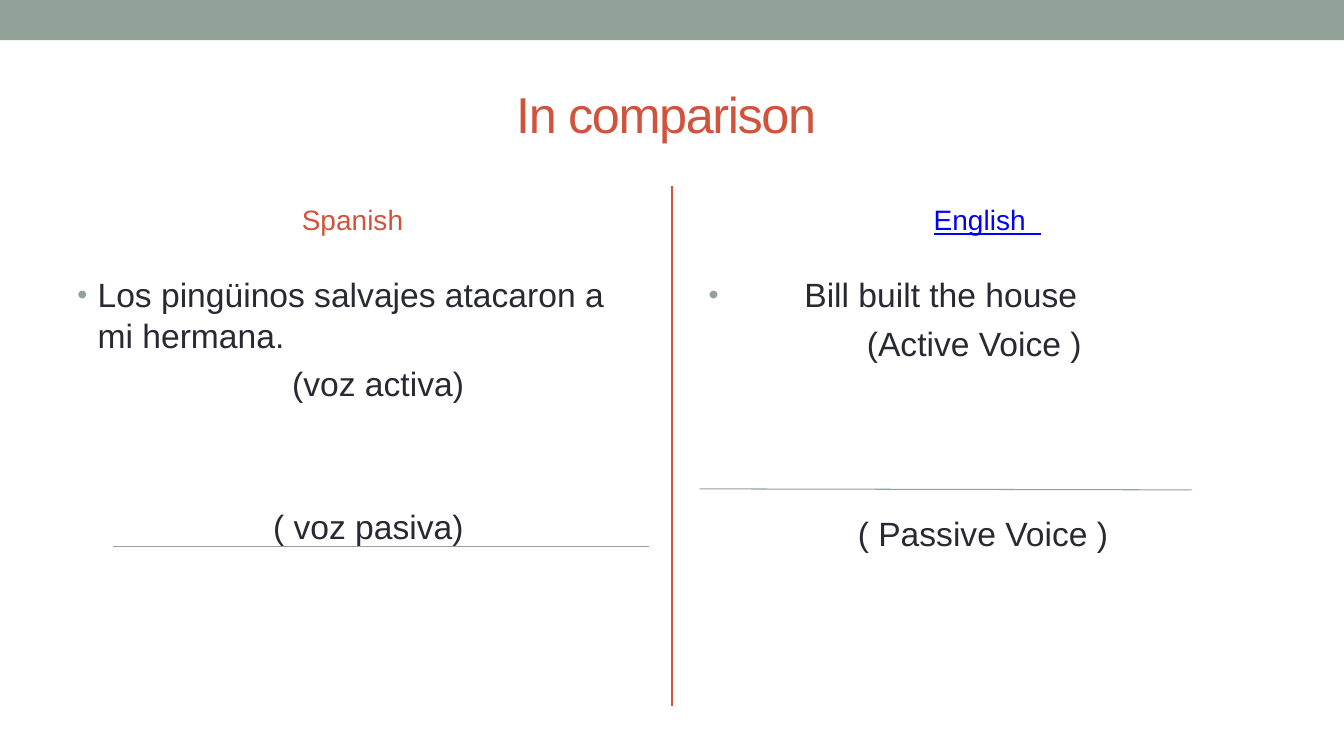
import pptx
import pptx.dml.color
import pptx.enum.shapes
import pptx.enum.text
import pptx.oxml.ns
import pptx.util
from lxml import etree

Inches = pptx.util.Inches
Pt = pptx.util.Pt
ANCHOR = pptx.enum.text.MSO_ANCHOR
ALIGN = pptx.enum.text.PP_ALIGN
COLORS = {"sage": "93A299", "brick": "D2533C", "ink": "292934", "link": "0000FF"}
SLIDE_WIDTH, SLIDE_HEIGHT = 13.33, 7.5
MARGIN = 0.67
COLUMN_WIDTH = 5.73

# Each sentence: text, left indent in inches, space before in points, bulleted, hanging indent
COLUMNS = [
    {
        "left": MARGIN, "heading": "Spanish ", "color": "brick", "underline": False,
        "sentences": [
            ("Los pingüinos salvajes atacaron a mi hermana.", 0.2, 0, True),
            ("(voz activa)", 2.13, 6, False),
            ("( voz pasiva)", 1.94, 73, False),
        ],
        "rule": ((0.45, 3.59), (5.77, 3.59)),
    },
    {
        "left": SLIDE_WIDTH - MARGIN - COLUMN_WIDTH, "heading": "English  ",
        "color": "link", "underline": True,
        "sentences": [
            ("Bill built the house", 0.95, 0, True),
            ("(Active Voice )", 1.57, 6, False),
            ("( Passive Voice )", 1.48, 107, False),
        ],
        "rule": ((0.01, 3.02), (4.89, 3.03)),
    },
]


def rgb(name):
    return pptx.dml.color.RGBColor.from_string(COLORS[name])


def style(font, size, color):
    font.name = "Arial"
    font.size = Pt(size)
    font.color.rgb = rgb(color)


def add_line(slide, start, end, color, weight):
    line = slide.shapes.add_connector(
        pptx.enum.shapes.MSO_CONNECTOR.STRAIGHT, *map(Inches, start + end))
    line.line.color.rgb = rgb(color)
    line.line.width = Pt(weight)
    etree.SubElement(line._element.spPr, pptx.oxml.ns.qn("a:effectLst"))


def add_text_box(slide, left, top, width, height):
    frame = slide.shapes.add_textbox(*map(Inches, (left, top, width, height))).text_frame
    frame.word_wrap = True
    return frame


def add_bullet(paragraph, hang):
    properties = paragraph._p.get_or_add_pPr()
    properties.set("indent", str(-Inches(hang)))
    color = etree.SubElement(properties, pptx.oxml.ns.qn("a:buClr"))
    etree.SubElement(color, pptx.oxml.ns.qn("a:srgbClr"), val=COLORS["sage"])
    etree.SubElement(properties, pptx.oxml.ns.qn("a:buSzPct"), val="85000")
    etree.SubElement(properties, pptx.oxml.ns.qn("a:buFont"), typeface="Arial")
    etree.SubElement(properties, pptx.oxml.ns.qn("a:buChar"), char="•")


def add_banner(slide, width, height):
    banner = slide.shapes.add_shape(
        pptx.enum.shapes.MSO_SHAPE.RECTANGLE, 0, 0, Inches(width), Inches(height))
    banner.shadow.inherit = False
    banner.fill.solid()
    banner.fill.fore_color.rgb = rgb("sage")
    banner.line.fill.background()


def set_title(slide, text, left, top, width, height):
    title = slide.shapes.title
    title.left, title.top, title.width, title.height = map(
        Inches, (left, top, width, height))
    title.text_frame.text = text
    title.text_frame.vertical_anchor = ANCHOR.MIDDLE
    paragraph = title.text_frame.paragraphs[0]
    paragraph.alignment = ALIGN.CENTER
    run = paragraph.runs[0]
    style(run.font, 36, "brick")
    run._r.get_or_add_rPr().set("spc", "-100")


def add_heading(slide, column, left, top, width, height):
    frame = add_text_box(slide, left, top, width, height)
    frame.vertical_anchor = ANCHOR.MIDDLE
    frame.text = column["heading"]
    paragraph = frame.paragraphs[0]
    paragraph.alignment = ALIGN.CENTER
    font = paragraph.runs[0].font
    style(font, 20, column["color"])
    font.underline = column["underline"]


def add_sentences(slide, sentences, left, top, width, height):
    frame = add_text_box(slide, left, top, width, height)
    frame.text = "\n".join(sentence[0] for sentence in sentences)
    for paragraph, (_, indent, before, bulleted) in zip(frame.paragraphs, sentences):
        paragraph._p.get_or_add_pPr().set("marL", str(Inches(indent)))
        if bulleted:
            add_bullet(paragraph, indent)
        if before:
            paragraph.space_before = Pt(before)
        style(paragraph.runs[0].font, 24, "ink")


def add_column(slide, column, left, top, width, height):
    """Place a heading, its sentences and the thin rule inside the given box."""
    body_top = 0.84
    add_heading(slide, column, left, top, width, 0.7)
    add_sentences(slide, column["sentences"], left, top + body_top, width, height - body_top)
    start, end = ((left + x, top + y) for x, y in column["rule"])
    add_line(slide, start, end, "sage", 0.75)


def build_comparison(presentation):
    slide = presentation.slides.add_slide(presentation.slide_layouts[5])
    add_banner(slide, SLIDE_WIDTH, 0.4)
    add_line(slide, (SLIDE_WIDTH / 2, 1.85), (SLIDE_WIDTH / 2, 7), "brick", 1.5)
    set_title(slide, "In comparison ", MARGIN, 0.58, 12, 1.08)
    for column in COLUMNS:
        add_column(slide, column, column["left"], 1.83, COLUMN_WIDTH, 5.16)


def main():
    presentation = pptx.Presentation()
    presentation.slide_width = Inches(SLIDE_WIDTH)
    presentation.slide_height = Inches(SLIDE_HEIGHT)
    build_comparison(presentation)
    presentation.save("out.pptx")


if __name__ == "__main__":
    main()
